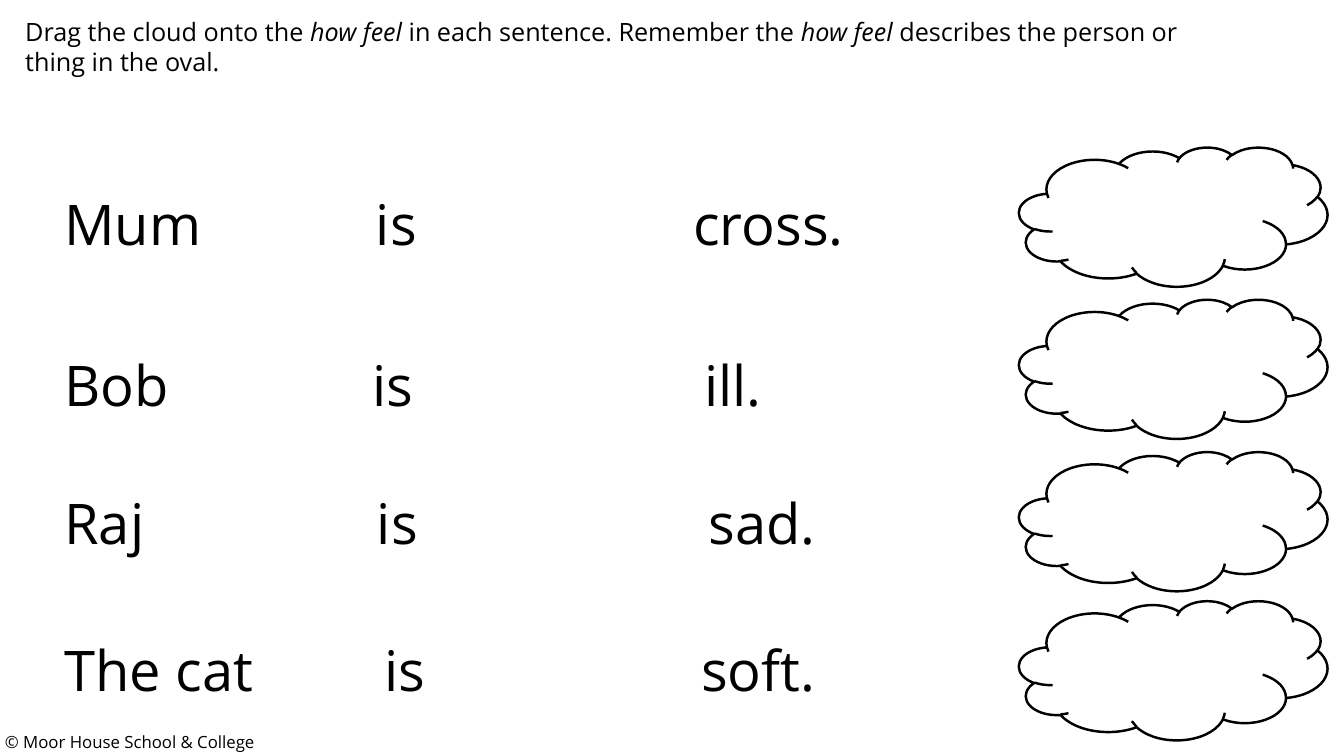
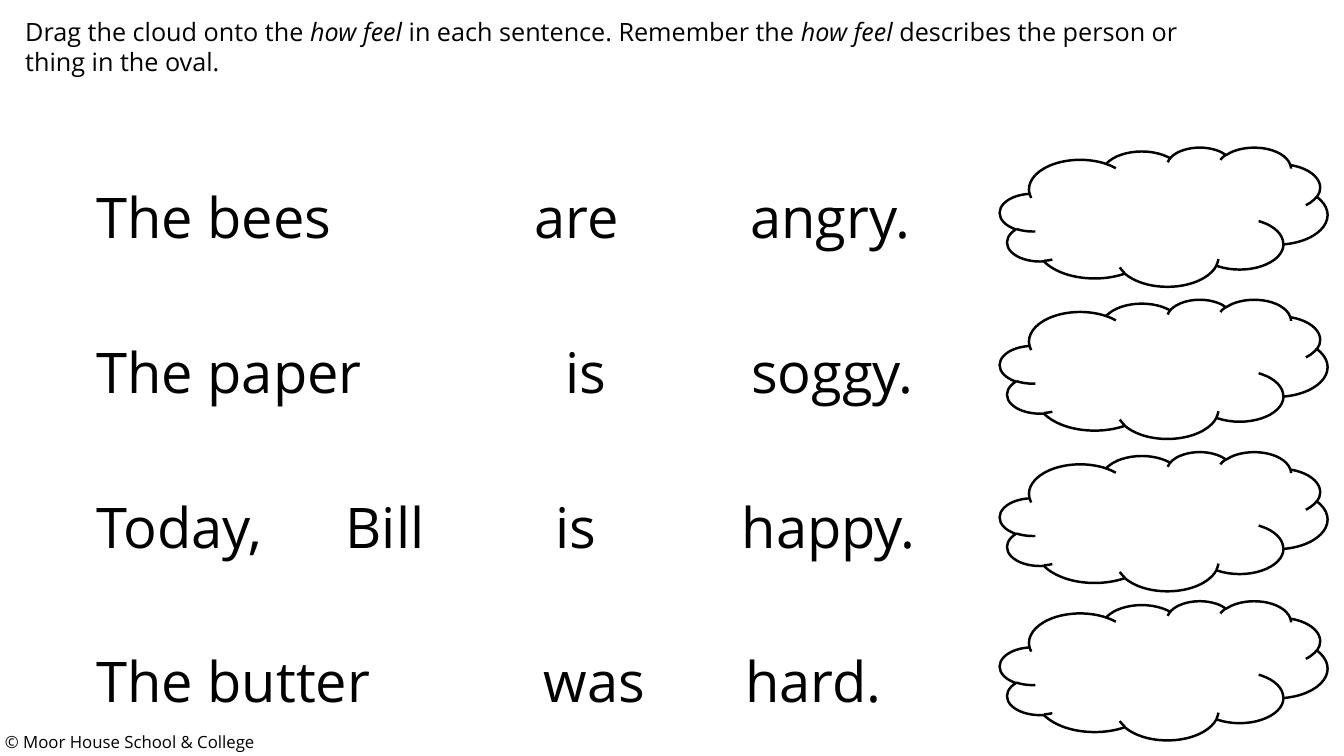
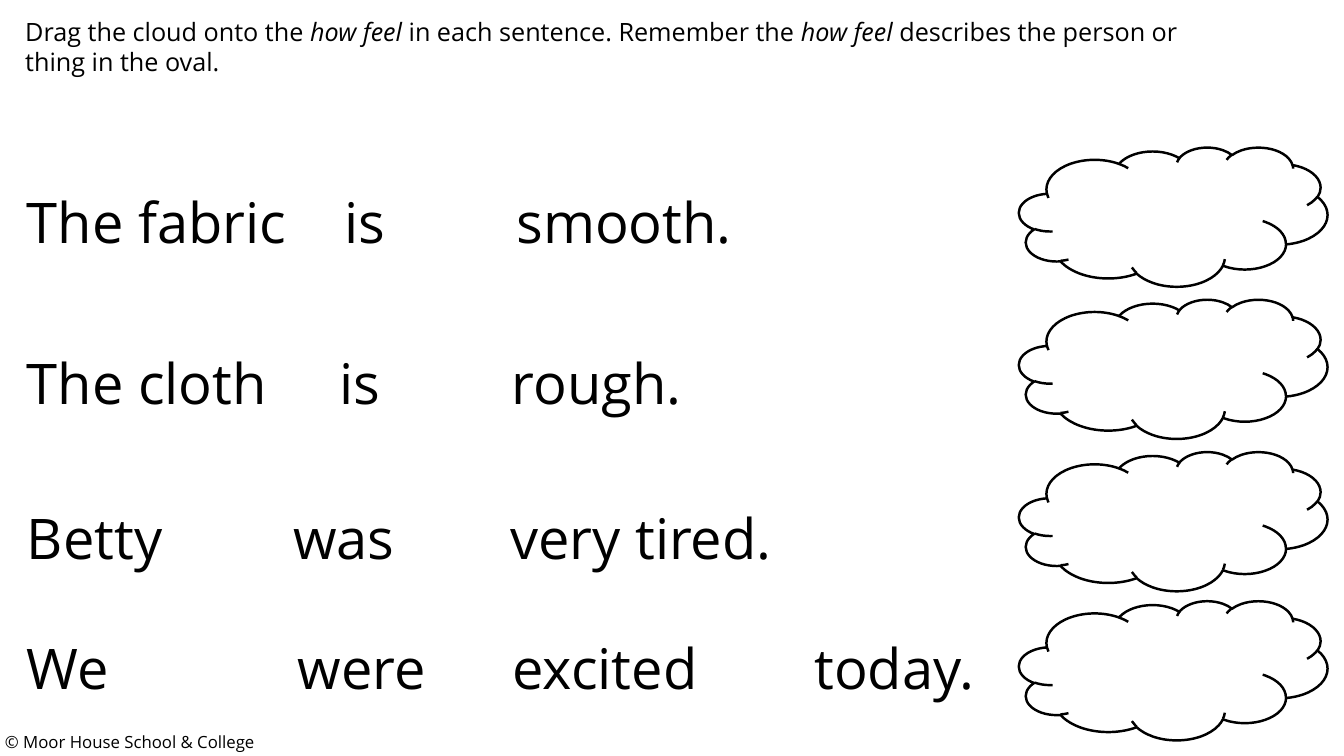
from dataclasses import dataclass

from pptx import Presentation
from pptx.dml.color import RGBColor
from pptx.enum.shapes import MSO_SHAPE
from pptx.enum.text import MSO_ANCHOR, MSO_AUTO_SIZE, PP_ALIGN
from pptx.oxml.ns import qn
from pptx.slide import Slide, SlideLayout
from pptx.text.text import Font, _Paragraph as Paragraph
from pptx.util import Pt
from lxml.etree import SubElement

BLACK = RGBColor(0x00, 0x00, 0x00)
FONT_NAME = "Open Sans"
SLIDE_WIDTH, SLIDE_HEIGHT = 960, 540
TITLE_ONLY = 5

INSTRUCTION = (
    ("Drag the cloud onto the ", False),
    ("how feel ", True),
    ("in each sentence. Remember the ", False),
    ("how feel ", True),
    ("describes the person or thing in the oval.", False),
)
COPYRIGHT = "© Moor House School & College"

CLOUD_TOPS = (105.1, 213.8, 322.6, 429.1)
CLOUD_RIGHT = 948.2
CLOUD_HEIGHT = 99.4
SENTENCE_WIDTH, SENTENCE_HEIGHT = 740, 55.4


@dataclass(frozen=True)
class Sentence:
    top: float
    phrases: tuple[str, ...]
    stops: tuple[float, ...]


@dataclass(frozen=True)
class Exercise:
    left: float
    cloud_width: float
    sentences: tuple[Sentence, ...]


EXERCISES = (
    Exercise(38.9, 220.3, (
        Sentence(131.8, ("Mum", "is", "cross."), (222.6, 449.2)),
        Sentence(247, ("Bob", "is", "ill."), (220.1, 457.1)),
        Sentence(345.6, ("Raj", "is", "sad."), (223.3, 460.3)),
        Sentence(450.7, ("The cat", "is", "soft."), (228.4, 455)),
    )),
    Exercise(61.9, 234, (
        Sentence(126.7, ("The bees", "are", "angry."), (313, 467)),
        Sentence(237.6, ("The paper", "is", "soggy."), (335, 467.5)),
        Sentence(348.5, ("Today,", "Bill", "is", "happy."), (178, 328, 461)),
        Sentence(458.6, ("The butter", "was", "hard."), (319.5, 463.5)),
    )),
    Exercise(12.2, 220.3, (
        Sentence(130.3, ("The fabric", "is", "smooth."), (226.9, 349.6)),
        Sentence(245.5, ("The cloth", "is", "rough."), (223.5, 346.2)),
        Sentence(356.4, ("Betty", "was", "very tired."), (190.1, 345.4)),
        Sentence(449.3, ("We", "were", "excited", "today."), (193.5, 347, 562.5)),
    )),
)


def style_font(font: Font, size: float, italic: bool = False) -> None:
    font.name = FONT_NAME
    font.size = Pt(size)
    font.italic = italic
    font.color.rgb = BLACK


def add_tab_stops(paragraph: Paragraph, stops: tuple[float, ...]) -> None:
    tab_list = SubElement(paragraph._p.get_or_add_pPr(), qn("a:tabLst"))
    for stop in stops:
        SubElement(tab_list, qn("a:tab"), pos=str(int(Pt(stop))), algn="l")


def add_instruction(slide: Slide) -> None:
    title = slide.shapes.title
    title.left, title.top = Pt(10.8), Pt(7.9)
    title.width, title.height = Pt(862.6), Pt(51)
    frame = title.text_frame
    frame.word_wrap = True
    frame.auto_size = MSO_AUTO_SIZE.NONE
    frame.vertical_anchor = MSO_ANCHOR.TOP
    paragraph = frame.paragraphs[0]
    paragraph.alignment = PP_ALIGN.LEFT
    for words, italic in INSTRUCTION:
        run = paragraph.add_run()
        run.text = words
        style_font(run.font, 18, italic)


def add_sentence(slide: Slide, left: float, sentence: Sentence) -> None:
    box = slide.shapes.add_textbox(
        Pt(left), Pt(sentence.top), Pt(SENTENCE_WIDTH), Pt(SENTENCE_HEIGHT))
    box.text_frame.word_wrap = True
    paragraph = box.text_frame.paragraphs[0]
    paragraph.text = "\t".join(sentence.phrases)
    add_tab_stops(paragraph, sentence.stops)
    for run in paragraph.runs:
        style_font(run.font, 40)


def add_cloud(slide: Slide, top: float, width: float) -> None:
    cloud = slide.shapes.add_shape(
        MSO_SHAPE.CLOUD, Pt(CLOUD_RIGHT - width), Pt(top), Pt(width), Pt(CLOUD_HEIGHT))
    cloud.shadow.inherit = False
    cloud.fill.background()
    cloud.line.color.rgb = BLACK
    cloud.line.width = Pt(1.75)


def add_layout_footer(layout: SlideLayout, slide: Slide) -> None:
    footer = slide.shapes.add_textbox(Pt(-3.6), Pt(519.1), Pt(368.6), Pt(21.6))
    footer.text_frame.word_wrap = True
    footer.text_frame.text = COPYRIGHT
    style_font(footer.text_frame.paragraphs[0].runs[0].font, 12)
    layout.shapes._spTree.append(footer._element)


def main() -> None:
    deck = Presentation()
    deck.slide_width, deck.slide_height = Pt(SLIDE_WIDTH), Pt(SLIDE_HEIGHT)
    layout = deck.slide_layouts[TITLE_ONLY]
    for exercise in EXERCISES:
        slide = deck.slides.add_slide(layout)
        add_instruction(slide)
        for sentence in exercise.sentences:
            add_sentence(slide, exercise.left, sentence)
        for top in CLOUD_TOPS:
            add_cloud(slide, top, exercise.cloud_width)
    add_layout_footer(layout, deck.slides[0])
    deck.save("out.pptx")


if __name__ == "__main__":
    main()
